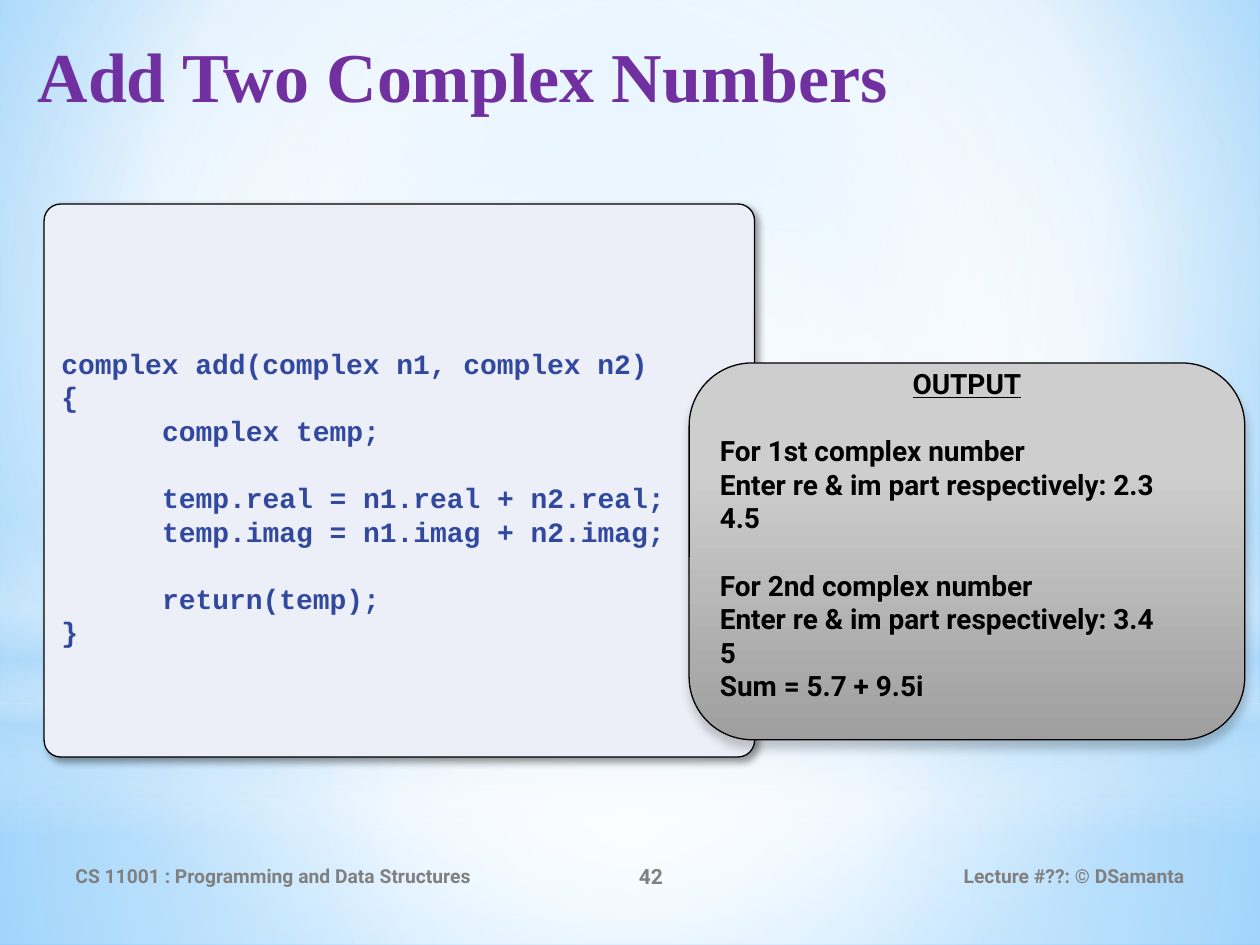
import pptx
import pptx.dml.color
import pptx.enum.shapes
import pptx.enum.text
import pptx.oxml
import pptx.oxml.ns
import pptx.util

Pt = pptx.util.Pt
SHAPES = pptx.enum.shapes.MSO_SHAPE
ALIGN = pptx.enum.text.PP_ALIGN
ANCHOR = pptx.enum.text.MSO_ANCHOR
NAMESPACE = pptx.oxml.ns.nsdecls("a")
WIDTH, HEIGHT = 720, 540
LINE_HEIGHT = 19.2
CHARACTER_WIDTH = 9.6

CODE = [
    ("complex add(complex n1, complex n2)", 0, 0),
    ("{", 0, 0),
    ("complex temp;", 6, 0),
    ("temp.real = n1.real + n2.real;", 6, 1),
    ("temp.imag = n1.imag + n2.imag;", 6, 0),
    ("return(temp);", 6, 1),
    ("}", 0, 0),
]
OUTPUT = [
    ("OUTPUT", 0, 0),
    ("For 1st complex number", 0, 1),
    ("Enter re & im part respectively: 2.3", 0, 0),
    ("4.5", 0, 0),
    ("For 2nd complex number", 0, 1),
    ("Enter re & im part respectively: 3.4", 0, 0),
    ("5", 0, 0),
    ("Sum = 5.7 + 9.5i", 0, 0),
]


def color(value):
    return pptx.dml.color.RGBColor.from_string(value)


def apply_gradient(fill, parent, stops, focus=None):
    fill.solid()
    stop_xml = "".join(
        f'<a:gs pos="{position * 1000}"><a:srgbClr val="{value}">'
        f'<a:alpha val="{alpha * 1000}"/></a:srgbClr></a:gs>'
        for position, value, alpha in stops
    )
    if focus:
        sides = " ".join(f'{side}="{value * 1000}"' for side, value in zip("ltrb", focus))
        direction = f'<a:path path="circle"><a:fillToRect {sides}/></a:path>'
    else:
        direction = '<a:lin ang="5400000" scaled="0"/>'
    gradient = pptx.oxml.parse_xml(
        f'<a:gradFill {NAMESPACE} rotWithShape="1"><a:gsLst>{stop_xml}</a:gsLst>{direction}</a:gradFill>'
    )
    solid = parent.find(pptx.oxml.ns.qn("a:solidFill"))
    parent.replace(solid, gradient)


def add_shadow(shape, alpha, blur, distance, angle):
    effects = shape._element.spPr.find(pptx.oxml.ns.qn("a:effectLst"))
    effects.append(pptx.oxml.parse_xml(
        f'<a:outerShdw {NAMESPACE} blurRad="{Pt(blur)}" dist="{Pt(distance)}" '
        f'dir="{angle * 60000}" algn="ctr" rotWithShape="0"><a:srgbClr val="000000">'
        f'<a:alpha val="{alpha * 1000}"/></a:srgbClr></a:outerShdw>'
    ))


def add_plain_shape(slide, kind, box):
    shape = slide.shapes.add_shape(kind, *map(Pt, box))
    shape.shadow.inherit = False
    shape.line.fill.background()
    return shape


def set_font(paragraph, name, size, value):
    paragraph.font.name = name
    paragraph.font.size = Pt(size)
    paragraph.font.bold = True
    paragraph.font.color.rgb = color(value)


def add_backdrop(slide, box):
    left, top, width, height = box
    background = slide.background.fill
    properties = slide._element.find(".//" + pptx.oxml.ns.qn("p:bgPr"))
    apply_gradient(background, properties,
                   [(0, "9ED5FF", 100), (60, "FFFFFF", 100), (100, "5BB9FF", 100)],
                   (20, 10, 20, 60))
    center = (50, 50, 50, 50)
    horizon = 401.8
    layers = [
        (SHAPES.RECTANGLE, horizon, height - horizon, center,
         [(0, "FFFFFF", 91), (37, "FFFFFF", 76), (100, "B4DCFA", 79)]),
        (SHAPES.RECTANGLE, 0, horizon, center,
         [(0, "FFFFFF", 89), (48, "FFFFFF", 62), (100, "B4DCFA", 79)]),
        (SHAPES.RECTANGLE, 296.6, 180, None,
         [(0, "FFFFFF", 0), (29, "FFFFFF", 30), (45, "B4DCFA", 40),
          (55, "FFFFFF", 26), (65, "B4DCFA", 60), (100, "FFFFFF", 0)]),
        (SHAPES.OVAL, 126, horizon, center,
         [(0, "FFFFFF", 100), (56, "FFFFFF", 0)]),
    ]
    for kind, offset, layer_height, focus, stops in layers:
        shape = add_plain_shape(slide, kind, (left, top + offset, width, layer_height))
        apply_gradient(shape.fill, shape._element.spPr, stops, focus)


def add_label(slide, box, text, name, size, value, alignment=ALIGN.LEFT, anchor=ANCHOR.MIDDLE):
    frame = slide.shapes.add_textbox(*map(Pt, box)).text_frame
    frame.word_wrap = True
    frame.vertical_anchor = anchor
    paragraph = frame.paragraphs[0]
    paragraph.text = text
    paragraph.alignment = alignment
    set_font(paragraph, name, size, value)


def add_footer(slide, box):
    left, top, width, height = box
    parts = [
        (0, 264, "CS 11001 : Programming and Data Structures", 11, ALIGN.LEFT),
        (264, 144, "42", 12, ALIGN.CENTER),
        (width - 198, 198, "Lecture #??: © DSamanta", 11, ALIGN.RIGHT),
    ]
    for offset, part_width, text, size, alignment in parts:
        add_label(slide, (left + offset, top, part_width, height), text,
                  "Roboto", size, "808080", alignment)


def add_panel(slide, box, lines, font_name, font_color):
    panel = add_plain_shape(slide, SHAPES.ROUNDED_RECTANGLE, box)
    panel.line.color.rgb = color("000000")
    panel.line.width = Pt(0.75)
    frame = panel.text_frame
    frame.word_wrap = True
    frame.vertical_anchor = ANCHOR.MIDDLE
    for index, (text, indent, gap) in enumerate(lines):
        paragraph = frame.add_paragraph() if index else frame.paragraphs[0]
        paragraph.text = text
        paragraph.alignment = ALIGN.LEFT
        paragraph.line_spacing = Pt(LINE_HEIGHT)
        paragraph.space_before = Pt(gap * LINE_HEIGHT)
        set_font(paragraph, font_name, 16, font_color)
        if indent:
            paragraph._p.get_or_add_pPr().set("marL", str(Pt(indent * CHARACTER_WIDTH)))
    return panel


def add_code_panel(slide, box):
    panel = add_panel(slide, box, CODE, "Courier New", "31489F")
    panel.adjustments[0] = 0.03
    panel.fill.solid()
    panel.fill.fore_color.rgb = color("ECEFF8")
    panel.text_frame.margin_top = Pt(3.6 + LINE_HEIGHT)
    add_shadow(panel, 40, 4, 3, 45)


def add_output_panel(slide, box):
    panel = add_panel(slide, box, OUTPUT, "Roboto", "000000")
    apply_gradient(panel.fill, panel._element.spPr,
                   [(28, "CECECE", 100), (100, "9F9F9F", 100)])
    panel.text_frame.margin_bottom = Pt(3.6 + LINE_HEIGHT)
    heading = panel.text_frame.paragraphs[0]
    heading.alignment = ALIGN.CENTER
    heading.font.underline = True
    heading.runs[0].font.underline = True
    add_shadow(panel, 20, 5, 4, 90)


def main():
    presentation = pptx.Presentation()
    presentation.slide_width = Pt(WIDTH)
    presentation.slide_height = Pt(HEIGHT)
    slide = presentation.slides.add_slide(presentation.slide_layouts[6])
    add_backdrop(slide, (0, 0, WIDTH, HEIGHT))
    add_label(slide, (14.4, 15, 686, 90), "Add Two Complex Numbers",
              "Times New Roman", 40, "7030A0", anchor=ANCHOR.TOP)
    add_footer(slide, (36, 486, 648, 28.8))
    add_code_panel(slide, (25.2, 116.6, 406, 316))
    add_output_panel(slide, (393.8, 207.4, 317.5, 215.3))
    presentation.save("out.pptx")


if __name__ == "__main__":
    main()
